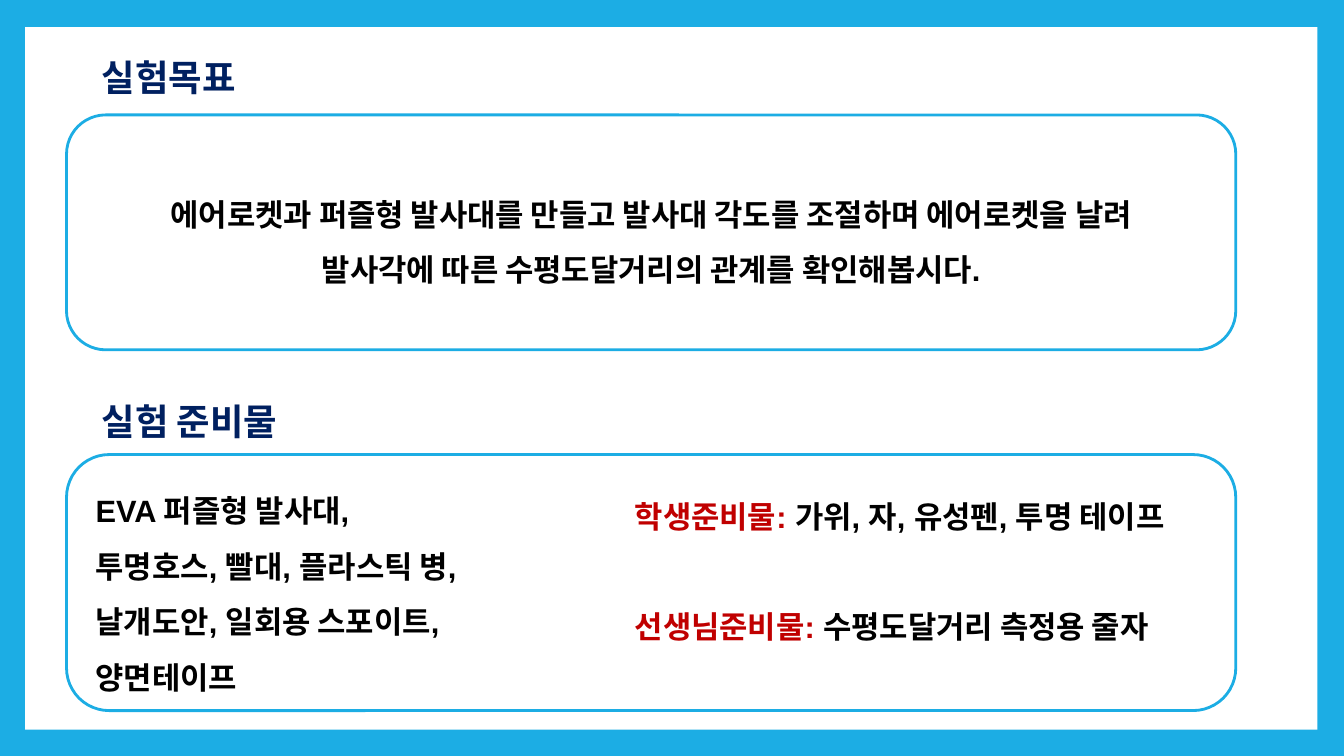
from pptx import Presentation
from pptx import util as u
from pptx.dml import color
from pptx.enum import shapes, text

WIDE, HIGH = u.Inches(13.333), u.Inches(7.5)
BLUE, NAVY, RED, BLACK, WHITE = "1CADE4", "002060", "C00000", "000000", "FFFFFF"
HEAD = {"size": u.Pt(26), "bold": True, "name": "Calibri"}
BODY = {"size": u.Pt(22), "bold": True, "name": "Arial"}
LEFT, SPAN = 4.95, 87


def paint(fill, tone):
    fill.solid()
    fill.fore_color.rgb = color.RGBColor.from_string(tone)


def place(x, y, w, h):
    """Turn percentages of the slide into lengths."""
    return [round(part * side / 100)
            for part, side in zip((x, y, w, h), (WIDE, HIGH) * 2)]


def panel(slide, kind, area, edge=None):
    """Add a white shape, outlined when an edge colour is given."""
    shape = slide.shapes.add_shape(kind, *place(*area))
    shape.shadow.inherit = False
    paint(shape.fill, WHITE)
    if edge:
        paint(shape.line.fill, edge)
        shape.line.width = u.Pt(2)
    else:
        shape.line.fill.background()
    return shape


def write(frame, lines, style, **layout):
    """Fill a frame; each line is a list of (wording, colour) runs."""
    frame.word_wrap = True
    for i, line in enumerate(lines):
        para = frame.paragraphs[0] if i == 0 else frame.add_paragraph()
        for key, value in layout.items():
            setattr(para, key, value)
        for words, tone in line:
            run = para.add_run()
            run.text = words
            for key, value in style.items():
                setattr(run.font, key, value)
            paint(run.font.fill, tone)


def label(slide, area, words):
    frame = slide.shapes.add_textbox(*place(*area)).text_frame
    for side in ("left", "top", "right", "bottom"):
        setattr(frame, f"margin_{side}", u.Inches(0.1))
    write(frame, [[(words, NAVY)]], HEAD)


def listing(slide, area, lines):
    frame = slide.shapes.add_textbox(*place(*area)).text_frame
    frame.auto_size = text.MSO_AUTO_SIZE.SHAPE_TO_FIT_TEXT
    write(frame, lines, BODY, line_spacing=1.5)
    return frame


def main():
    deck = Presentation()
    deck.slide_width, deck.slide_height = WIDE, HIGH
    slide = deck.slides.add_slide(deck.slide_layouts[6])
    paint(slide.background.fill, BLUE)
    kind = shapes.MSO_SHAPE
    panel(slide, kind.RECTANGLE, (1.88, 3.6, 96.15, 92.93))

    label(slide, (6.83, 6, 14.7, 6.4), "실험목표")
    goal = panel(slide, kind.ROUNDED_RECTANGLE, (LEFT, 15.2, SPAN, 31.07), BLUE)
    goal.text_frame.vertical_anchor = text.MSO_ANCHOR.MIDDLE
    write(goal.text_frame, [
        [("에어로켓과 퍼즐형 발사대를 만들고 발사대 각도를 조절하며 에어로켓을 날려", BLACK)],
        [("발사각에 따른 수평도달거리의 관계를 확인해봅시다.", BLACK)],
    ], BODY, line_spacing=1.5, alignment=text.PP_ALIGN.CENTER)

    label(slide, (6.83, 51.47, 17.25, 6.4), "실험 준비물")
    panel(slide, kind.ROUNDED_RECTANGLE, (LEFT, 60.13, SPAN, 33.87), BLUE)
    people = listing(slide, (46.5, 62.67, 45.45, 22.67), [
        [("학생준비물: ", RED), ("가위, 자, 유성펜, 투명 테이프", BLACK)],
        [("선생님준비물: ", RED), ("수평도달거리 측정용 줄자", BLACK)],
    ])
    people.paragraphs[1].space_before = u.Pt(39.5)
    listing(slide, (6.38, 62, 40.2, 30), [[(words, BLACK)] for words in (
        "EVA 퍼즐형 발사대,",
        "투명호스, 빨대, 플라스틱 병,",
        "날개도안, 일회용 스포이트,",
        "양면테이프",
    )])
    deck.save("out.pptx")


if __name__ == "__main__":
    main()
